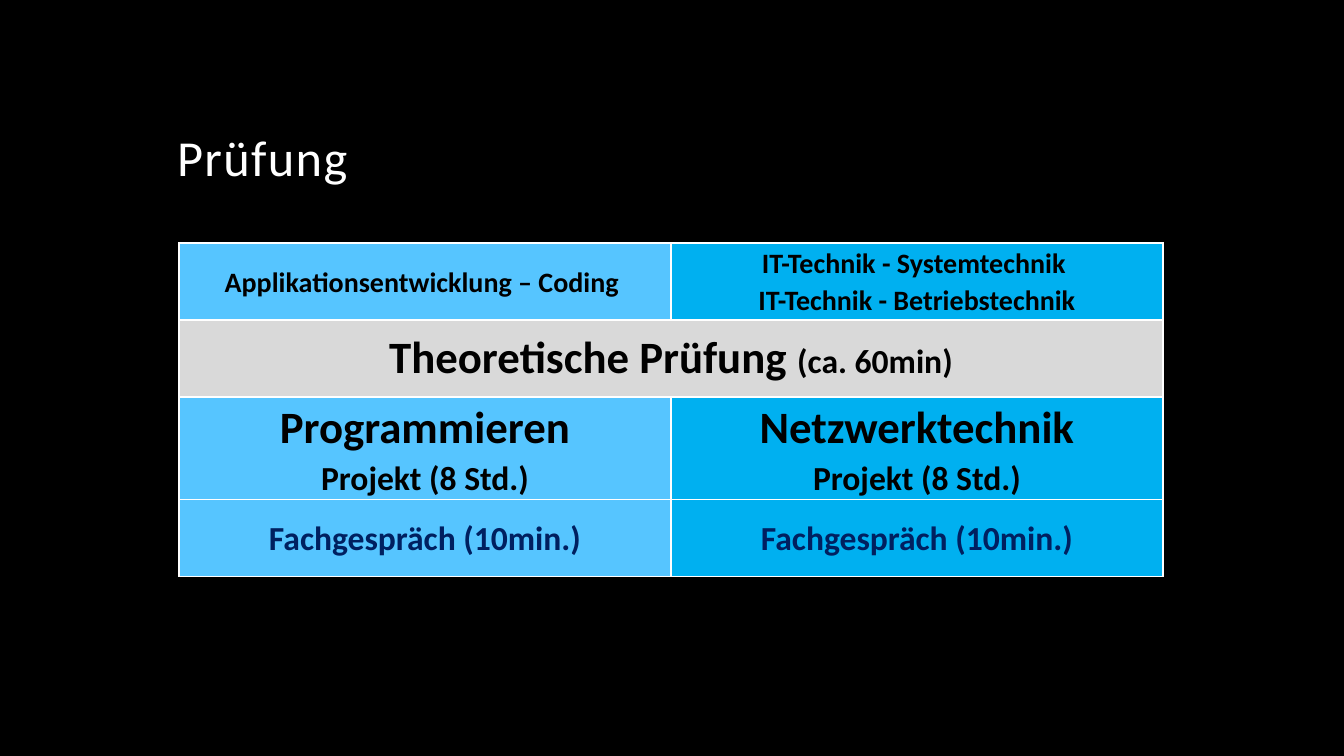
from lxml import etree
from pptx import Presentation
from pptx.dml.color import RGBColor
from pptx.enum.text import MSO_ANCHOR, PP_ALIGN
from pptx.oxml.ns import qn
from pptx.util import Pt

PX = 914400 / 100.8
THEME = {
    "font": "Calibri",
    "back": "000000", "title": "FFFFFF", "border": "FFFFFF",
    "coding": "56C5FF", "technik": "00B0F0", "shared": "D9D9D9",
    "text": "000000", "talk": "002060",
    "title_size": 36, "head_size": 20, "big_size": 32, "small_size": 24,
}


def px(n):
    return round(n * PX)


def add_run(p, text, size, color, bold=True):
    r = p.add_run()
    r.text = text
    fmt = {"name": THEME["font"], "size": Pt(THEME[size]), "bold": bold}
    for key, value in fmt.items():
        setattr(r.font, key, value)
    r.font.color.rgb = RGBColor.from_string(THEME[color])
    return r


prs = Presentation()
prs.slide_width, prs.slide_height = px(1344), px(756)
s = prs.slides.add_slide(prs.slide_layouts[5])
s.background.fill.solid()
s.background.fill.fore_color.rgb = RGBColor.from_string(THEME["back"])

# Title
title = s.shapes.title
box = {"left": px(167), "top": px(42), "width": px(1008), "height": px(151)}
for key, value in box.items():
    setattr(title, key, value)
tf = title.text_frame
tf.word_wrap = True
tf.vertical_anchor = MSO_ANCHOR.BOTTOM
p = tf.paragraphs[0]
p.alignment = PP_ALIGN.LEFT
p.line_spacing = 0.9
r = add_run(p, "Prüfung", "title_size", "title", bold=False)
r.font._element.set("spc", "100")

# Table content: row, column, fill, line spacing, paragraphs of (text, size, colour)
talk = [[("Fachgespräch (10min.)", "small_size", "talk")]]
project = [("Projekt (8 Std.)", "small_size", "text")]
cells = [
    (0, 0, "coding", 1.07, [[("Applikationsentwicklung – Coding ", "head_size", "text")]]),
    (0, 1, "technik", 1.07, [[("IT-Technik - Systemtechnik ", "head_size", "text")],
                             [("IT-Technik - Betriebstechnik", "head_size", "text")]]),
    (1, 0, "shared", 1.0, [[("Theoretische Prüfung ", "big_size", "text"),
                            ("(ca. 60min)", "small_size", "text")]]),
    (2, 0, "coding", 1.07, [[("Programmieren", "big_size", "text")], project]),
    (2, 1, "technik", 1.07, [[("Netzwerktechnik", "big_size", "text")], project]),
    (3, 0, "coding", 1.07, talk),
    (3, 1, "technik", 1.07, talk),
]

# Table grid
table = s.shapes.add_table(4, 2, px(179), px(243), px(984), px(308)).table
table.first_row = table.horz_banding = False
for col in table.columns:
    col.width = px(492)
for row in table.rows:
    row.height = px(77)
table.cell(1, 0).merge(table.cell(1, 1))

# Cell text and fills
for row, col, fill, spacing, paragraphs in cells:
    cell = table.cell(row, col)
    fmt = {"margin_left": px(7), "margin_right": px(7), "margin_top": 0,
           "margin_bottom": 0, "vertical_anchor": MSO_ANCHOR.MIDDLE}
    for key, value in fmt.items():
        setattr(cell, key, value)
    cell.fill.solid()
    cell.fill.fore_color.rgb = RGBColor.from_string(THEME[fill])
    tf = cell.text_frame
    for i, runs in enumerate(paragraphs):
        p = tf.add_paragraph() if i else tf.paragraphs[0]
        p.alignment = PP_ALIGN.CENTER
        p.line_spacing = spacing
        for run in runs:
            add_run(p, *run)

# Cell borders, placed ahead of the fill
for cell in table.iter_cells():
    tcPr = cell._tc.get_or_add_tcPr()
    for i, side in enumerate(("a:lnL", "a:lnR", "a:lnT", "a:lnB")):
        ln = etree.Element(qn(side), w=str(Pt(1)))
        solid = etree.SubElement(ln, qn("a:solidFill"))
        etree.SubElement(solid, qn("a:srgbClr"), val=THEME["border"])
        tcPr.insert(i, ln)

prs.save("out.pptx")
